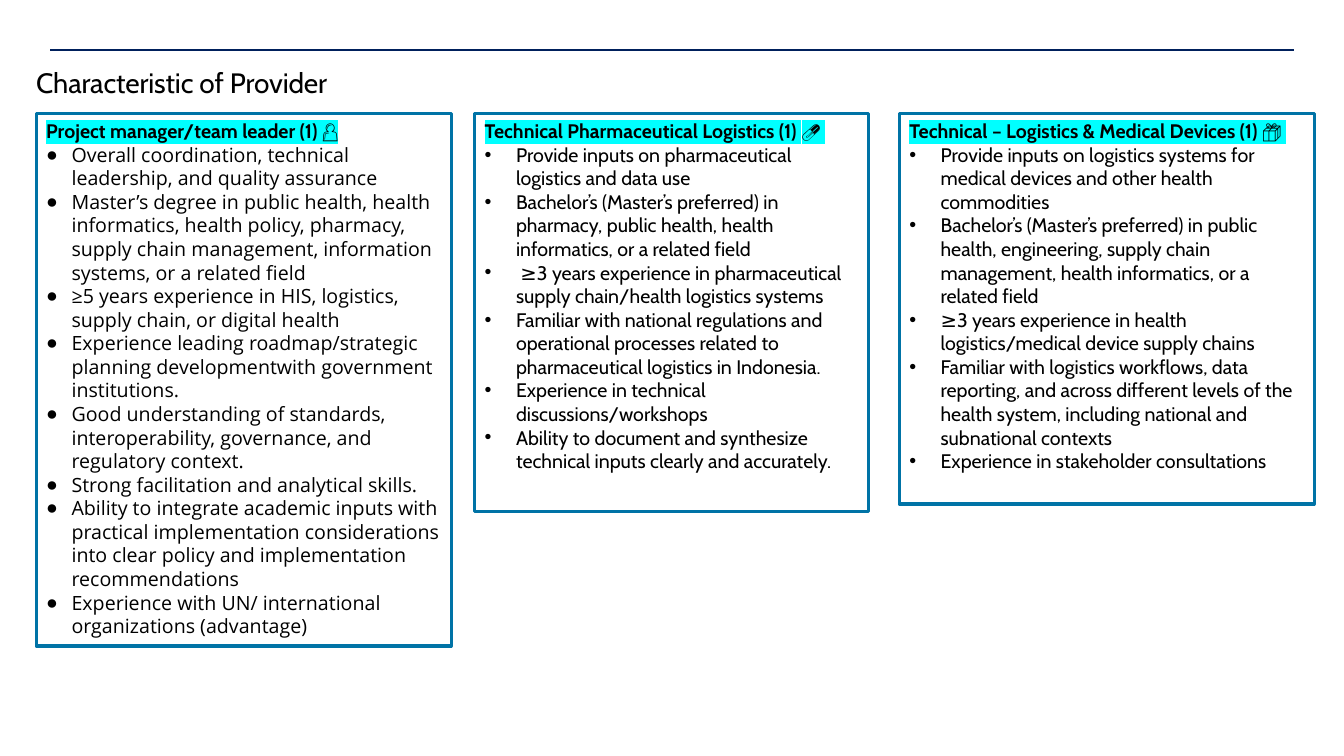
from lxml.etree import SubElement
from pptx import Presentation
from pptx.dml.color import RGBColor
from pptx.enum.shapes import MSO_CONNECTOR as Connector
from pptx.enum.text import MSO_ANCHOR as Anchor, MSO_AUTO_SIZE as AutoSize, PP_ALIGN as Align
from pptx.oxml.ns import qn
from pptx.util import Cm, Pt

COLORS = {"rule": "00205C", "border": "0073A6", "text": "000000", "mark": "00FFFF"}
BOX_TOP = 2.87
LINE_PITCH = Pt(16.84)

# Lengths in cm; heading runs are (text, bold)
ROLES = [
    {
        "left": 0.91, "width": 10.46, "height": 13.41,
        "bullet": "●", "indent": 0.64, "level": 1, "font": "Open Sans",
        "heading": [("Project manager/team leader (1) 👤", True)],
        "items": [
            "Overall coordination, technical leadership, and quality assurance",
            "Master’s degree in public health, health informatics, health policy, pharmacy, "
            "supply chain management, information systems, or a related field",
            "≥5 years experience in HIS, logistics, supply chain, or digital health",
            "Experience leading roadmap/strategic planning developmentwith government institutions.",
            "Good understanding of standards, interoperability, governance, and regulatory context.",
            "Strong facilitation and analytical skills.",
            "Ability to integrate academic inputs with practical implementation considerations "
            "into clear policy and implementation recommendations",
            "Experience with UN/ international organizations (advantage)",
        ],
    },
    {
        "left": 11.96, "width": 9.93, "height": 10.01,
        "bullet": "•", "indent": 0.79, "level": 0, "font": "Cabin",
        "heading": [("Technical Pharmaceutical Logistics (1) ", True), ("💊", False), (" ", True)],
        "items": [
            "Provide inputs on pharmaceutical logistics and data use",
            "Bachelor’s (Master’s preferred) in pharmacy, public health, health informatics, "
            "or a related field",
            " ≥3 years experience in pharmaceutical supply chain/health logistics systems",
            "Familiar with national regulations and operational processes related to "
            "pharmaceutical logistics in Indonesia.",
            "Experience in technical discussions/workshops",
            "Ability to document and synthesize technical inputs clearly and accurately.",
        ],
    },
    {
        "left": 22.66, "width": 10.46, "height": 9.83,
        "bullet": "•", "indent": 0.79, "level": 0, "font": "Cabin",
        "heading": [("Technical – Logistics & Medical Devices (1)", True), (" 📦", False), (" ", True)],
        "items": [
            "Provide inputs on logistics systems for medical devices and other health commodities",
            "Bachelor’s (Master’s preferred) in public health, engineering, supply chain management, "
            "health informatics, or a related field",
            "≥3 years experience in health logistics/medical device supply chains",
            "Familiar with logistics workflows, data reporting, and across different levels of "
            "the health system, including national and subnational contexts",
            "Experience in stakeholder consultations",
        ],
    },
]


def rgb(name):
    return RGBColor.from_string(COLORS[name])


def apply(target, values):
    for name, value in values.items():
        setattr(target, name, value)


def place(sp, left, top, width, height):
    apply(sp, {"left": Cm(left), "top": Cm(top), "width": Cm(width), "height": Cm(height)})


def add_run(p, text, font, size=14, bold=False, marked=False):
    r = p.add_run()
    r.text = text
    apply(r.font, {"name": font, "size": Pt(size), "bold": bold})
    r.font.color.rgb = rgb("text")
    if marked:
        rPr = r.font._element
        mark = SubElement(rPr, qn("a:highlight"))
        SubElement(mark, qn("a:srgbClr"), val=COLORS["mark"])
        rPr.find(qn("a:latin")).addprevious(mark)
    return r


def format_paragraph(p, indent=0, bullet=None, **values):
    pPr = p._p.get_or_add_pPr()
    pPr.set("marL", str(Cm(indent)))
    pPr.set("indent", str(-Cm(indent)))
    if bullet:
        SubElement(pPr, qn("a:buChar"), char=bullet)
    else:
        SubElement(pPr, qn("a:buNone"))
    apply(p, {"space_before": Pt(0), "space_after": Pt(0), "line_spacing": LINE_PITCH, **values})


def add_rule(s):
    rule = s.shapes.add_connector(Connector.STRAIGHT, Cm(1.27), Cm(1.27), Cm(32.6), Cm(1.27))
    rule.line.color.rgb = rgb("rule")
    rule.line.width = Pt(1.5)
    SubElement(rule._element.spPr, qn("a:effectLst"))


def fill_title(sp, text):
    place(sp, 0.91, 1.65, 28.98, 0.86)
    tf = sp.text_frame
    apply(tf, {"margin_left": 0, "margin_right": 0, "margin_top": 0, "margin_bottom": 0,
               "vertical_anchor": Anchor.MIDDLE, "word_wrap": True, "auto_size": AutoSize.NONE})
    p = tf.paragraphs[0]
    p.alignment = Align.LEFT
    r = add_run(p, text, "Cabin", size=20)
    r.font._element.set("spc", "-10")


def fill_role(sp, role):
    place(sp, role["left"], BOX_TOP, role["width"], role["height"])
    sp.line.color.rgb = rgb("border")
    sp.line.width = Pt(2.25)
    tf = sp.text_frame
    apply(tf, {"vertical_anchor": Anchor.TOP, "word_wrap": True, "auto_size": AutoSize.NONE})

    # Highlighted role name
    p = tf.paragraphs[0]
    format_paragraph(p, alignment=Align.JUSTIFY)
    for text, bold in role["heading"]:
        add_run(p, text, "Cabin", bold=bold, marked=True)

    # Requirements
    for item in role["items"]:
        p = tf.add_paragraph()
        format_paragraph(p, role["indent"], role["bullet"],
                         level=role["level"], alignment=Align.LEFT)
        add_run(p, item, role["font"])


def main():
    prs = Presentation()
    apply(prs, {"slide_width": Cm(33.87), "slide_height": Cm(19.05)})
    s = prs.slides.add_slide(prs.slide_layouts.get_by_name("Comparison"))

    add_rule(s)
    fill_title(s.shapes.title, "Characteristic of Provider")

    # One body placeholder per role, the spare ones go
    bodies = [ph for ph in s.placeholders if ph.placeholder_format.idx > 0]
    for sp, role in zip(bodies, ROLES):
        fill_role(sp, role)
    for sp in bodies[len(ROLES):]:
        sp._element.getparent().remove(sp._element)

    prs.save("out.pptx")


if __name__ == "__main__":
    main()
